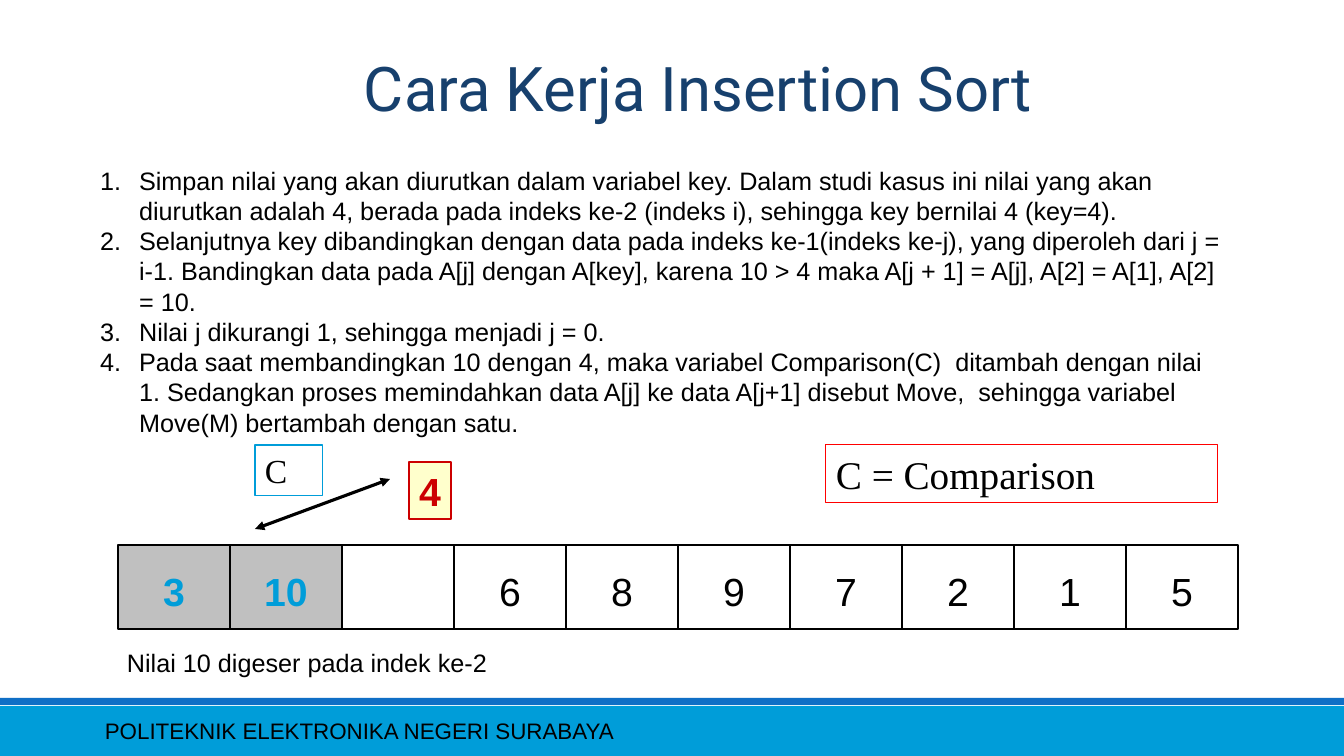
from dataclasses import dataclass
from typing import Optional

import pptx
import pptx.dml.color
import pptx.enum.shapes
import pptx.enum.text
import pptx.oxml.ns
import pptx.util
from lxml import etree
from pptx.shapes.autoshape import Shape
from pptx.slide import Slide
from pptx.text.text import TextFrame, _Paragraph

EMU_PER_PIXEL = 12192000 / 1344
COLORS = {
    "black": "000000",
    "navy": "17406D",
    "blue": "0F6FC6",
    "cyan": "009DD9",
    "gray": "C0C0C0",
    "cream": "FFFFCC",
    "crimson": "CC0000",
    "red": "FF0000",
}
LEFT = pptx.enum.text.PP_ALIGN.LEFT
CENTER = pptx.enum.text.PP_ALIGN.CENTER
TOP = pptx.enum.text.MSO_ANCHOR.TOP
MIDDLE = pptx.enum.text.MSO_ANCHOR.MIDDLE

STEPS = [
    "Simpan nilai yang akan diurutkan dalam variabel key. Dalam studi kasus ini nilai yang akan "
    "diurutkan adalah 4, berada pada indeks ke-2 (indeks i), sehingga key bernilai 4 (key=4).",
    "Selanjutnya key dibandingkan dengan data pada indeks ke-1(indeks ke-j), yang diperoleh dari "
    "j = i-1. Bandingkan data pada A[j] dengan A[key], karena 10 > 4 maka A[j + 1] = A[j], "
    "A[2] = A[1], A[2] = 10.",
    "Nilai j dikurangi 1, sehingga menjadi j = 0.",
    "Pada saat membandingkan 10 dengan 4, maka variabel Comparison(C)  ditambah dengan nilai 1. "
    "Sedangkan proses memindahkan data A[j] ke data A[j+1] disebut Move,  sehingga variabel "
    "Move(M) bertambah dengan satu.",
]
STEP_INDENT = 39
ARRAY = ["3", "10", "", "6", "8", "9", "7", "2", "1", "5"]
SORTED_COUNT = 2
ARRAY_LEFT, ARRAY_TOP = 118, 545
CELL_WIDTH, CELL_HEIGHT = 112, 84
CELL_TEXT_TOP = 22


@dataclass(frozen=True)
class TextStyle:
    size: int
    font: str = "Arial"
    color: str = "black"
    bold: bool = False
    align: pptx.enum.text.PP_ALIGN = LEFT


@dataclass(frozen=True)
class Box:
    left: int
    top: int
    width: int
    height: int
    text: str = ""
    style: TextStyle = TextStyle(18)
    fill: Optional[str] = None
    line: Optional[str] = None
    line_width: float = 0.75
    anchor: pptx.enum.text.MSO_ANCHOR = TOP
    wrap: bool = True
    text_top: int = 5


BODY_STYLE = TextStyle(18)
SORTED_STYLE = TextStyle(28, color="cyan", bold=True, align=CENTER)
UNSORTED_STYLE = TextStyle(28, align=CENTER)

BOXES = [
    Box(0, 706, 1344, 50, fill="cyan"),
    Box(0, 698, 1344, 7, fill="blue"),
    Box(95, 711, 848, 40, "POLITEKNIK ELEKTRONIKA NEGERI SURABAYA", TextStyle(16), anchor=MIDDLE),
    Box(117, 642, 1221, 40, "Nilai 10 digeser pada indek ke-2", BODY_STYLE),
    Box(409, 462, 42, 57, "4", TextStyle(28, color="crimson", bold=True, align=CENTER),
        fill="cream", line="crimson", line_width=1.5, wrap=False),
    Box(255, 445, 68, 51, "C", TextStyle(24, "Times New Roman"), line="cyan"),
    Box(826, 445, 392, 58, "C = Comparison", TextStyle(28, "Times New Roman"), line="red"),
]


def px(length: int) -> pptx.util.Emu:
    return pptx.util.Emu(round(length * EMU_PER_PIXEL))


def rgb(name: str) -> pptx.dml.color.RGBColor:
    return pptx.dml.color.RGBColor.from_string(COLORS[name])


def format_paragraph(paragraph: _Paragraph, style: TextStyle) -> None:
    paragraph.alignment = style.align
    paragraph.space_before = pptx.util.Pt(0)
    paragraph.font.name = style.font
    paragraph.font.size = pptx.util.Pt(style.size)
    paragraph.font.bold = style.bold
    paragraph.font.color.rgb = rgb(style.color)


def number_paragraph(paragraph: _Paragraph) -> None:
    properties = paragraph._p.get_or_add_pPr()
    properties.set("marL", str(px(STEP_INDENT)))
    properties.set("indent", str(-px(STEP_INDENT)))
    font = etree.SubElement(properties, pptx.oxml.ns.qn("a:buFont"))
    font.set("typeface", "+mj-lt")
    number = etree.SubElement(properties, pptx.oxml.ns.qn("a:buAutoNum"))
    number.set("type", "arabicPeriod")


def place(shape: Shape, left: int, top: int, width: int, height: int) -> None:
    shape.left, shape.top = px(left), px(top)
    shape.width, shape.height = px(width), px(height)


def set_frame(frame: TextFrame, anchor: pptx.enum.text.MSO_ANCHOR, wrap: bool = True) -> None:
    frame.auto_size = pptx.enum.text.MSO_AUTO_SIZE.NONE
    frame.vertical_anchor = anchor
    frame.word_wrap = wrap


def add_box(slide: Slide, box: Box) -> None:
    position = [px(length) for length in (box.left, box.top, box.width, box.height)]
    if box.fill or box.line:
        shape = slide.shapes.add_shape(pptx.enum.shapes.MSO_SHAPE.RECTANGLE, *position)
        shape.shadow.inherit = False
    else:
        shape = slide.shapes.add_textbox(*position)
    if box.fill:
        shape.fill.solid()
        shape.fill.fore_color.rgb = rgb(box.fill)
    else:
        shape.fill.background()
    if box.line:
        shape.line.color.rgb = rgb(box.line)
        shape.line.width = pptx.util.Pt(box.line_width)
    else:
        shape.line.fill.background()
    if box.text:
        frame = shape.text_frame
        set_frame(frame, box.anchor, box.wrap)
        frame.margin_top = px(box.text_top)
        frame.text = box.text
        format_paragraph(frame.paragraphs[0], box.style)


def add_title(slide: Slide) -> None:
    title = slide.shapes.title
    place(title, 126, 24, 1145, 126)
    set_frame(title.text_frame, MIDDLE)
    title.text_frame.text = "Cara Kerja Insertion Sort"
    format_paragraph(title.text_frame.paragraphs[0], TextStyle(44, "Roboto", "navy", align=CENTER))


def add_steps(slide: Slide) -> None:
    body = slide.placeholders[1]
    place(body, 90, 160, 1148, 285)
    set_frame(body.text_frame, TOP)
    body.text_frame.text = "\n".join(STEPS)
    for paragraph in body.text_frame.paragraphs:
        number_paragraph(paragraph)
        format_paragraph(paragraph, BODY_STYLE)


def add_array(slide: Slide) -> None:
    for index, value in enumerate(ARRAY):
        is_sorted = index < SORTED_COUNT
        add_box(slide, Box(
            ARRAY_LEFT + index * CELL_WIDTH, ARRAY_TOP, CELL_WIDTH, CELL_HEIGHT, value,
            SORTED_STYLE if is_sorted else UNSORTED_STYLE,
            fill="gray" if is_sorted else None,
            line="black", line_width=1.5, text_top=CELL_TEXT_TOP,
        ))


def add_comparison_arrow(slide: Slide) -> None:
    arrow = slide.shapes.add_connector(
        pptx.enum.shapes.MSO_CONNECTOR.STRAIGHT, px(255), px(529), px(390), px(479))
    arrow.line.color.rgb = rgb("black")
    arrow.line.width = pptx.util.Pt(2.25)
    line = arrow.line._get_or_add_ln()
    for end in ("a:headEnd", "a:tailEnd"):
        etree.SubElement(line, pptx.oxml.ns.qn(end)).set("type", "triangle")
    etree.SubElement(arrow._element.spPr, pptx.oxml.ns.qn("a:effectLst"))


def main() -> None:
    presentation = pptx.Presentation()
    presentation.slide_width, presentation.slide_height = px(1344), px(756)
    slide = presentation.slides.add_slide(presentation.slide_layouts[1])
    add_title(slide)
    add_steps(slide)
    for box in BOXES:
        add_box(slide, box)
    add_array(slide)
    add_comparison_arrow(slide)
    presentation.save("out.pptx")


if __name__ == "__main__":
    main()
